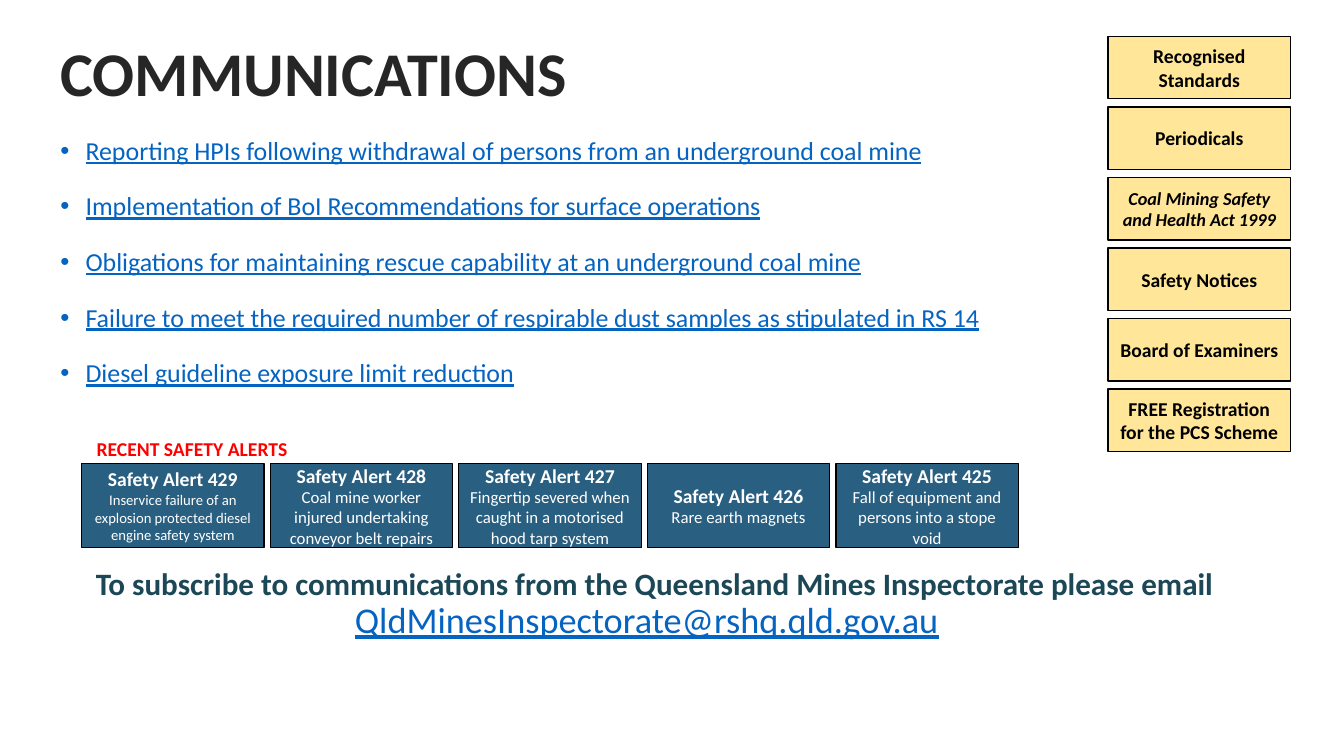
from lxml import etree
from pptx import Presentation, util as u
from pptx.dml.color import RGBColor
from pptx.enum import shapes, text
from pptx.oxml.ns import qn

FONT = "Calibri"
COLORS = {
    "title": "262626", "link": "0563C1", "subscribe": "1B4756", "heading": "FF0000",
    "topic": "FFE699", "alert": "295F81", "dark": "000000", "light": "FFFFFF",
}
TOPICS = [  # label, size, italic
    ("Recognised Standards", 14, False),
    ("Periodicals", 14, False),
    ("Coal Mining Safety and Health Act 1999", 13, True),
    ("Safety Notices", 14, False),
    ("Board of Examiners", 14, False),
    ("FREE Registration for the PCS Scheme", 14, False),
]
ALERTS = [  # number, summary, summary size
    (429, "Inservice failure of an explosion protected diesel engine safety system", 10.5),
    (428, "Coal mine worker injured undertaking conveyor belt repairs", 12),
    (427, "Fingertip severed when caught in a motorised hood tarp system", 12),
    (426, "Rare earth magnets", 12),
    (425, "Fall of equipment and persons into a stope void", 12),
]
NOTICES = [
    "Reporting HPIs following withdrawal of persons from an underground coal mine",
    "Implementation of BoI Recommendations for surface operations",
    "Obligations for maintaining rescue capability at an underground coal mine",
    "Failure to meet the required number of respirable dust samples as stipulated in RS 14",
    "Diesel guideline exposure limit reduction",
]


def rgb(name):
    return RGBColor.from_string(COLORS[name])


def add_run(paragraph, words, size, color, bold=False, italic=False, underline=False):
    run = paragraph.add_run()
    run.text = words
    font = run.font
    font.name, font.size, font.color.rgb = FONT, u.Pt(size), rgb(color)
    font.bold, font.italic, font.underline = bold, italic, underline


def next_paragraph(frame, first, align=text.PP_ALIGN.LEFT, spacing=0.9):
    paragraph = frame.paragraphs[0] if first else frame.add_paragraph()
    paragraph.alignment, paragraph.line_spacing = align, spacing
    return paragraph


def add_text_frame(slide, left, top, width, height):
    frame = slide.shapes.add_textbox(*map(u.Inches, (left, top, width, height))).text_frame
    frame.word_wrap = True
    return frame


def add_bullet(paragraph):
    properties = paragraph._p.get_or_add_pPr()
    properties.set("marL", str(u.Inches(0.25)))
    properties.set("indent", str(u.Inches(-0.25)))
    etree.SubElement(properties, qn("a:buFont")).set("typeface", "Arial")
    etree.SubElement(properties, qn("a:buChar")).set("char", "•")


def add_button(slide, preset, left, top, height, fill, lines):
    """Each line is a tuple of arguments for add_run."""
    button = slide.shapes.add_shape(preset, *map(u.Inches, (left, top, 1.81, height)))
    button.shadow.inherit = False
    button.fill.solid()
    button.fill.fore_color.rgb = rgb(fill)
    button.line.color.rgb = rgb("dark")
    button.line.width = u.Pt(1)
    frame = button.text_frame
    frame.word_wrap = True
    frame.vertical_anchor = text.MSO_ANCHOR.MIDDLE
    for i, line in enumerate(lines):
        add_run(next_paragraph(frame, i == 0, text.PP_ALIGN.CENTER, 1.0), *line)


def add_communications(slide):
    frame = add_text_frame(slide, 0.5, 0.38, 10.28, 3.84)
    add_run(next_paragraph(frame, True), "COMMUNICATIONS", 44.4, "title", bold=True)
    for notice in NOTICES:
        paragraph = next_paragraph(frame, False)
        paragraph.space_before = u.Pt(19.7)
        add_bullet(paragraph)
        add_run(paragraph, notice, 18.5, "link", underline=True)


def add_topics(slide):
    for i, (label, size, italic) in enumerate(TOPICS):
        preset = (shapes.MSO_SHAPE.ACTION_BUTTON_CUSTOM if i < 4
                  else shapes.MSO_SHAPE.RECTANGLE)
        add_button(slide, preset, 10.99, 0.36 + 0.7 * i, 0.62, "topic",
                   [(label, size, "dark", True, italic)])


def add_alerts(slide):
    heading = next_paragraph(add_text_frame(slide, 0.5, 4.31, 2.81, 0.33), True,
                             text.PP_ALIGN.CENTER)
    add_run(heading, "RECENT SAFETY ALERTS", 14, "heading", bold=True)
    for i, (number, summary, size) in enumerate(ALERTS):
        add_button(slide, shapes.MSO_SHAPE.ACTION_BUTTON_CUSTOM, 0.81 + 1.87 * i, 4.6, 0.83,
                   "alert", [(f"Safety Alert {number}", 14, "light", True),
                             (summary, size, "light")])


def add_subscription(slide):
    frame = add_text_frame(slide, 0.42, 5.59, 12.15, 0.83)
    invitation = next_paragraph(frame, True, text.PP_ALIGN.CENTER)
    add_run(invitation, "To subscribe to communications from the Queensland Mines "
            "Inspectorate please email", 22.2, "subscribe", bold=True)
    address = next_paragraph(frame, False, text.PP_ALIGN.CENTER)
    # A right indent sets the address slightly left of centre
    address._p.get_or_add_pPr().set("marR", str(u.Inches(0.16)))
    add_run(address, "QldMinesInspectorate@rshq.qld.gov.au", 25.9, "link", underline=True)


def main():
    deck = Presentation()
    deck.slide_width, deck.slide_height = u.Inches(13.33), u.Inches(7.5)
    slide = deck.slides.add_slide(deck.slide_layouts[6])
    # Title and linked notices
    add_communications(slide)
    # Topic buttons down the right side
    add_topics(slide)
    # Row of recent alerts
    add_alerts(slide)
    # Invitation to subscribe
    add_subscription(slide)
    deck.save("out.pptx")


if __name__ == "__main__":
    main()
